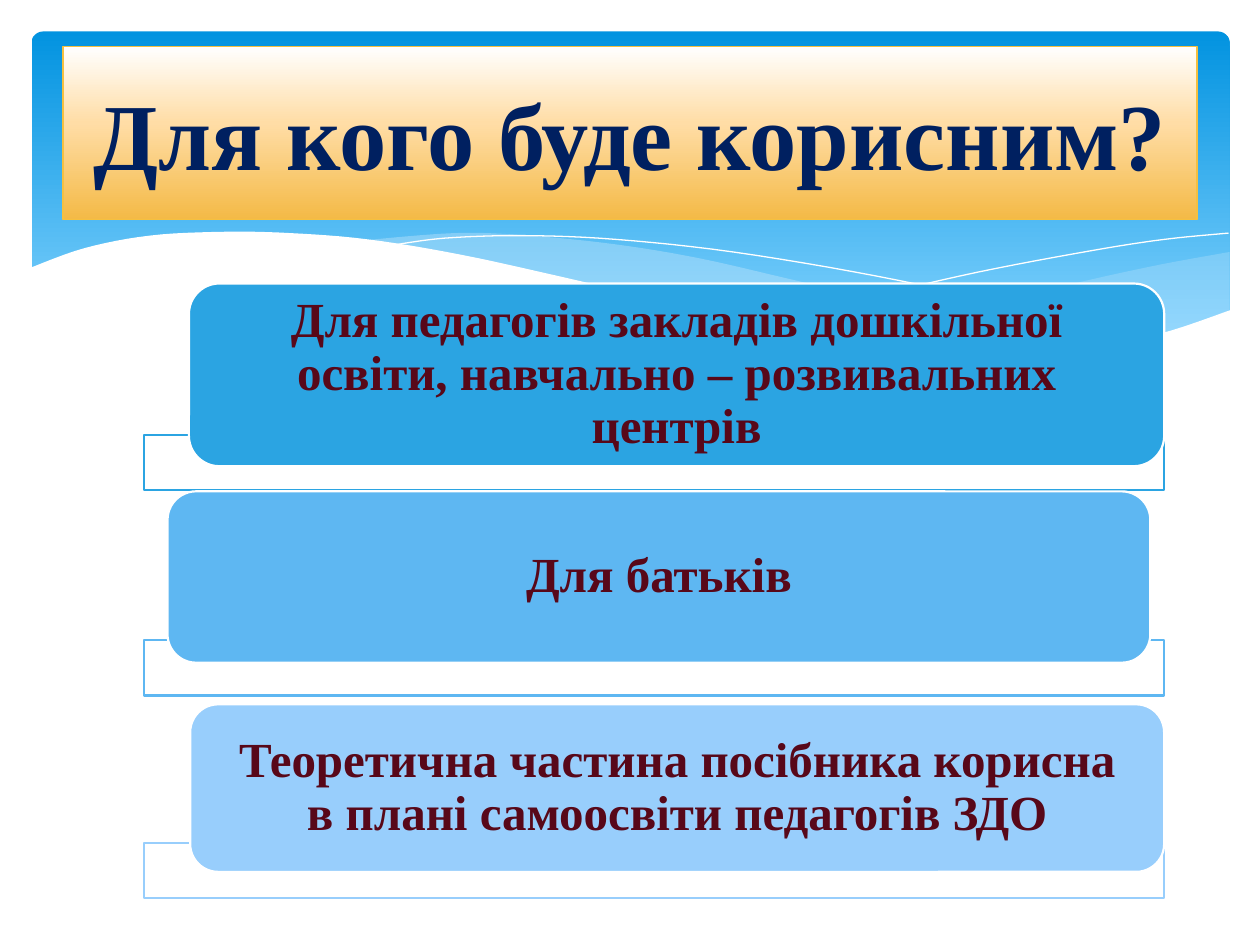
from lxml.etree import SubElement
from pptx import Presentation
from pptx.dml.color import RGBColor
from pptx.enum.shapes import MSO_SHAPE
from pptx.enum.text import MSO_ANCHOR, MSO_AUTO_SIZE, PP_ALIGN
from pptx.oxml.ns import qn
from pptx.util import Inches, Pt

WHITE = RGBColor(0xFF, 0xFF, 0xFF)
SKY_TOP = RGBColor(0x02, 0x93, 0xE0)
SKY_BOTTOM = RGBColor(0x81, 0xD2, 0xFE)
WAVE = RGBColor(0xC6, 0xE7, 0xFC)
PEACH = RGBColor(0xFF, 0xDD, 0xA6)
AMBER = RGBColor(0xF4, 0xBA, 0x47)
GOLD = RGBColor(0xF5, 0xC0, 0x40)
NAVY = RGBColor(0x00, 0x20, 0x60)
MAROON = RGBColor(0x58, 0x08, 0x19)
BLUE_DEEP = RGBColor(0x2B, 0xA4, 0xE2)
BLUE_MID = RGBColor(0x5E, 0xB7, 0xF2)
BLUE_LIGHT = RGBColor(0x98, 0xCE, 0xFC)

# Wave outlines as key points in inches, joined by smooth curves
RIGHT_WAVE_TOP = [(9.76, 2), (9.21, 2.1), (8.61, 2.23), (7.53, 2.48), (6.61, 2.65)]
RIGHT_WAVE_BOTTOM = [(6.61, 2.65), (7.19, 2.72), (7.69, 2.77), (8.14, 2.78),
                     (8.63, 2.75), (9.13, 2.67), (9.49, 2.57), (9.76, 2.47)]
MIDDLE_WAVE_TOP = [(8.93, 2.73), (8.07, 2.6), (7.06, 2.4), (6.29, 2.22), (5.55, 2.05),
                   (4.89, 1.94), (4.2, 1.87), (3.61, 1.85), (2.86, 1.91)]
MIDDLE_WAVE_BOTTOM = [(2.86, 1.91), (3.62, 2.03), (4.49, 2.22), (5.66, 2.48), (6.5, 2.64),
                      (7.22, 2.74), (7.96, 2.78), (8.48, 2.77), (8.93, 2.73)]
FALLING_LINE = [(3.09, 1.95), (3.53, 1.89), (4.16, 1.87), (4.89, 1.9), (5.82, 2),
                (6.95, 2.19), (7.95, 2.41), (9.07, 2.72)]
RISING_LINE = [(6.13, 2.57), (6.95, 2.35), (7.76, 2.16), (8.66, 1.99), (9.24, 1.9),
               (9.75, 1.85)]
FRONT_WAVE = [(9.77, 2.46), (9.2, 2.65), (8.63, 2.74), (8.09, 2.77), (7.44, 2.74),
              (6.48, 2.62), (5.55, 2.45), (4.47, 2.2), (3.65, 2.02), (2.92, 1.9),
              (2.3, 1.85), (1.77, 1.84), (1.19, 1.87), (0.67, 1.97), (0.23, 2.13)]

AUDIENCES = [
    ("Для педагогів закладів дошкільної освіти, навчально – розвивальних центрів",
     BLUE_DEEP, (1.5, 2.25, 7.74, 1.45), 3.45),
    ("Для батьків", BLUE_MID, (1.33, 3.9, 7.8, 1.36), 5.08),
    ("Теоретична частина посібника корисна в плані самоосвіти педагогів ЗДО",
     BLUE_LIGHT, (1.51, 5.59, 7.73, 1.33), 6.69),
]


def smooth(points, steps=6):
    """Return a Catmull-Rom curve that passes through the points."""
    padded = [points[0], *points, points[-1]]
    curve = [points[0]]
    for before, start, end, after in zip(padded, padded[1:], padded[2:], padded[3:]):
        for step in range(1, steps + 1):
            t = step / steps
            curve.append(tuple(
                (2 * b + (c - a) * t + (2 * a - 5 * b + 4 * c - d) * t ** 2
                 + (3 * b - a - 3 * c + d) * t ** 3) / 2
                for a, b, c, d in zip(before, start, end, after)))
    return curve


class SlideBuilder:
    font = "Times New Roman"

    def __init__(self, slide):
        self.slide = slide

    def paint(self, shape, fill=None, opacity=100, line=None, width=0.75):
        shape.shadow.inherit = False
        if fill is None:
            shape.fill.background()
        else:
            shape.fill.solid()
            shape.fill.fore_color.rgb = fill
            if opacity < 100:
                color = shape.element.spPr.find(qn("a:solidFill"))[0]
                SubElement(color, qn("a:alpha"), val=str(opacity * 1000))
        if line is None:
            shape.line.fill.background()
        else:
            shape.line.color.rgb = line
            shape.line.width = Pt(width)

    def paint_gradient(self, shape, stops):
        """Fill from top to bottom with (percent, colour) stops."""
        shape.fill.gradient()
        shape.fill.gradient_angle = 270
        stop_list = shape.element.spPr.find(qn("a:gradFill")).find(qn("a:gsLst"))
        for default_stop in list(stop_list):
            stop_list.remove(default_stop)
        for percent, color in stops:
            stop = SubElement(stop_list, qn("a:gs"), pos=str(percent * 1000))
            SubElement(stop, qn("a:srgbClr"), val=str(color))

    def set_text(self, shape, text, size, color, side_inset, end_inset, spacing=1.0):
        frame = shape.text_frame
        frame.text = text
        frame.word_wrap = True
        frame.auto_size = MSO_AUTO_SIZE.NONE
        frame.vertical_anchor = MSO_ANCHOR.MIDDLE
        frame.margin_left = frame.margin_right = Inches(side_inset)
        frame.margin_top = frame.margin_bottom = Inches(end_inset)
        paragraph = frame.paragraphs[0]
        paragraph.alignment = PP_ALIGN.CENTER
        paragraph.line_spacing = spacing
        font = paragraph.runs[0].font
        font.name, font.size, font.bold = self.font, Pt(size), True
        font.color.rgb = color

    def box(self, kind, bounds, **style):
        shape = self.slide.shapes.add_shape(kind, *map(Inches, bounds))
        self.paint(shape, **style)
        return shape

    def outline(self, points, closed=True, **style):
        start, *rest = [(Inches(x), Inches(y)) for x, y in points]
        builder = self.slide.shapes.build_freeform(*start)
        builder.add_line_segments(rest, close=closed)
        self.paint(builder.convert_to_shape(), **style)

    def backdrop(self):
        sky = self.box(MSO_SHAPE.ROUNDED_RECTANGLE, (0.25, 0.25, 9.51, 2.7))
        sky.adjustments[0] = 0.034
        self.paint_gradient(sky, [(0, SKY_TOP), (90, SKY_BOTTOM), (100, SKY_BOTTOM)])
        self.outline(smooth(RIGHT_WAVE_TOP) + smooth(RIGHT_WAVE_BOTTOM),
                     fill=WAVE, opacity=29)
        self.outline(smooth(MIDDLE_WAVE_TOP) + smooth(MIDDLE_WAVE_BOTTOM),
                     fill=WAVE, opacity=40)
        for crest in (FALLING_LINE, RISING_LINE):
            self.outline(smooth(crest), closed=False, line=WHITE)
        self.outline(smooth(FRONT_WAVE) + [(0.23, 3.29), (9.77, 3.29)], fill=WHITE)

    def title(self, text):
        title = self.slide.shapes.title
        title.element.getparent().append(title.element)  # in front of the backdrop
        title.left, title.top, title.width, title.height = map(Inches, (0.5, 0.37, 9, 1.37))
        self.paint_gradient(title, [(0, WHITE), (44, PEACH), (100, AMBER)])
        title.line.color.rgb = GOLD
        title.line.width = Pt(0.75)
        self.set_text(title, text, 54, NAVY, 0.1, 0.05)

    def audience(self, text, color, bounds, base_top):
        self.box(MSO_SHAPE.RECTANGLE, (1.14, base_top, 8.1, 0.44),
                 fill=WHITE, opacity=90, line=color, width=1.25)
        card = self.box(MSO_SHAPE.ROUNDED_RECTANGLE, bounds,
                        fill=color, line=WHITE, width=1.25)
        self.set_text(card, text, 28, MAROON, 0.21, 0, spacing=0.9)


def main():
    presentation = Presentation()
    presentation.slide_width, presentation.slide_height = Inches(10), Inches(7.5)
    title_only = presentation.slide_layouts[5]
    builder = SlideBuilder(presentation.slides.add_slide(title_only))
    builder.backdrop()
    builder.title("Для кого буде корисним?")
    for audience in AUDIENCES:
        builder.audience(*audience)
    presentation.save("out.pptx")


if __name__ == "__main__":
    main()
